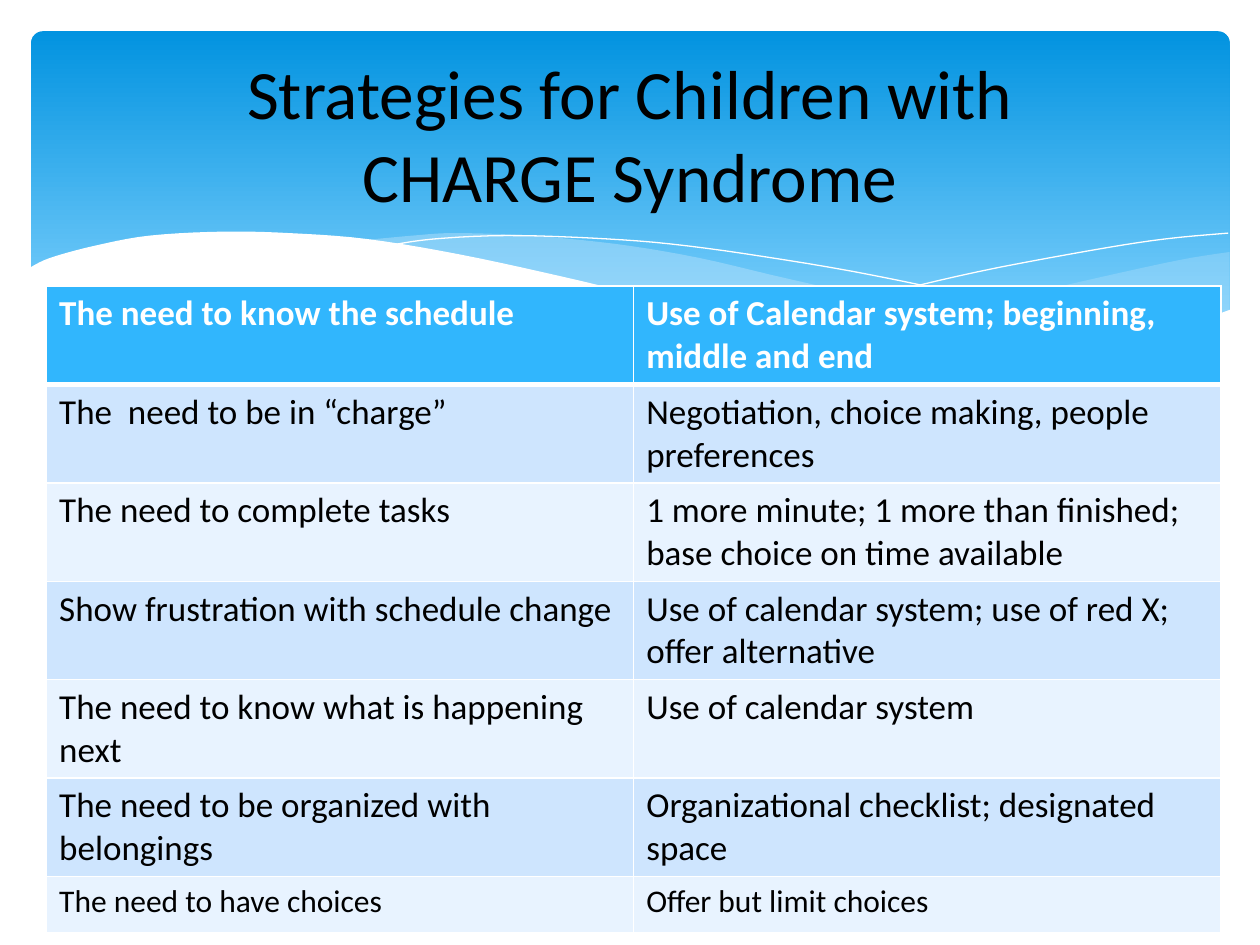
from lxml import etree
from pptx import Presentation
from pptx.dml.color import RGBColor
from pptx.enum.shapes import MSO_SHAPE
from pptx.enum.text import MSO_ANCHOR, PP_ALIGN
from pptx.oxml.ns import qn
from pptx.util import Cm, Pt

ROUNDED = MSO_SHAPE.ROUNDED_RECTANGLE
MIDDLE = MSO_ANCHOR.MIDDLE
CENTER = PP_ALIGN.CENTER

FONT = "Calibri"
WHITE = RGBColor(0xFF, 0xFF, 0xFF)
BLACK = RGBColor(0x00, 0x00, 0x00)
DEEP_BLUE = RGBColor(0x02, 0x93, 0xE0)
SKY_BLUE = RGBColor(0x83, 0xD3, 0xFE)
MIST = RGBColor(0xC6, 0xE7, 0xFC)
HEADER_BLUE = RGBColor(0x31, 0xB6, 0xFD)
BAND_DARK = RGBColor(0xCE, 0xE5, 0xFE)
BAND_LIGHT = RGBColor(0xE8, 0xF3, 0xFF)

RIGHT_WAVE = [
    [(24.21, 0.41), (23.16, 0.58), (21.29, 0.99), (19.2, 1.47), (16.21, 2.06)],
    [(16.21, 2.06), (17.32, 2.21), (18.64, 2.34), (20.09, 2.39), (21.34, 2.31),
     (22.61, 2.11), (23.52, 1.85), (24.21, 1.6)],
]
MIDDLE_WAVE = [
    [(22.1, 2.26), (20.68, 2.06), (18.24, 1.6), (15.39, 0.97), (13.51, 0.53),
     (11.84, 0.25), (10.08, 0.08), (8.59, 0.03), (7.75, 0.08), (6.68, 0.18)],
    [(6.68, 0.18), (8.1, 0.38), (9.68, 0.69), (10.82, 0.97), (12.88, 1.42),
     (15.11, 1.88), (17.07, 2.18), (18.75, 2.36), (20.19, 2.39), (21.18, 2.36),
     (22.1, 2.26)],
]
FALLING_LINE = [
    [(7.26, 0.28), (8.15, 0.15), (9.6, 0.08), (11.33, 0.13), (12.95, 0.25),
     (14.86, 0.51), (17.07, 0.89), (19.61, 1.45), (22.45, 2.24)],
]
RISING_LINE = [
    [(14.99, 1.85), (17.07, 1.3), (19.13, 0.81), (21.41, 0.38), (22.89, 0.15),
     (24.18, 0.03)],
]
WHITE_WAVE = [
    [(24.23, 1.57), (23.04, 1.98), (21.64, 2.26), (19.96, 2.36), (17.86, 2.24),
     (15.32, 1.88), (12.85, 1.4), (10.77, 0.91), (8.69, 0.46), (6.83, 0.15),
     (5.26, 0.03), (3.91, 0), (2.44, 0.08), (1.35, 0.28), (0.43, 0.53), (0, 0.74)],
    [(0, 3.68), (24.23, 3.68)],
]

STRATEGIES = [
    ("The need to know the schedule", "Use of Calendar system; beginning, middle and end"),
    ("The  need to be in “charge”", "Negotiation, choice making, people preferences"),
    ("The need to complete tasks",
     "1 more minute; 1 more than finished; base choice on time available"),
    ("Show frustration with schedule change",
     "Use of calendar system; use of red X;  offer alternative"),
    ("The need to know what is happening next", "Use of calendar system"),
    ("The need to be organized with belongings", "Organizational checklist; designated space"),
    ("The need to have choices", "Offer but limit choices"),
]


def smooth_curve(knots, steps=5):
    """Return points of a Catmull-Rom curve through the knots."""
    if len(knots) < 3:
        return knots
    padded = [knots[0], *knots, knots[-1]]
    points = [knots[0]]
    for a, b, c, d in zip(padded, padded[1:], padded[2:], padded[3:]):
        for step in range(1, steps + 1):
            t = step / steps
            points.append(tuple(
                0.5 * (2 * q + (r - p) * t + (2 * p - 5 * q + 4 * r - s) * t ** 2
                       + (3 * q - p - 3 * r + s) * t ** 3)
                for p, q, r, s in zip(a, b, c, d)))
    return points


def add_curve(slide, left, top, curves, closed):
    """Draw the curves as one outline, offset from left and top."""
    points = [(left + Cm(x), top + Cm(y)) for knots in curves for x, y in smooth_curve(knots)]
    builder = slide.shapes.build_freeform(*points[0])
    builder.add_line_segments(points[1:], close=closed)
    outline = builder.convert_to_shape()
    outline.shadow.inherit = False
    return outline


def add_wave(slide, left, top, curves, color, opacity=100):
    """Draw a filled wave."""
    wave = add_curve(slide, left, top, curves, True)
    wave.fill.solid()
    wave.fill.fore_color.rgb = color
    wave.line.fill.background()
    if opacity < 100:
        tint = wave.fill._xPr.find(".//" + qn("a:srgbClr"))
        etree.SubElement(tint, qn("a:alpha"), val=str(opacity * 1000))


def add_hairline(slide, left, top, curves):
    """Draw a thin white curve."""
    hairline = add_curve(slide, left, top, curves, False)
    hairline.fill.background()
    hairline.line.color.rgb = WHITE
    hairline.line.width = Pt(0)


def add_banner(slide, left, top, width, height):
    """Draw the rounded gradient banner."""
    banner = slide.shapes.add_shape(ROUNDED, left, top, width, height)
    banner.adjustments[0] = 0.034
    banner.shadow.inherit = False
    banner.line.fill.background()
    banner.fill.gradient()
    banner.fill.gradient_angle = 270
    stops = banner.fill.gradient_stops
    for stop, color, position in zip(stops, (DEEP_BLUE, SKY_BLUE), (0, 0.9)):
        stop.color.rgb = color
        stop.position = position


def add_waves(slide, left, top):
    """Layer the waves over the foot of the banner."""
    add_wave(slide, left, top, RIGHT_WAVE, MIST, 29)
    add_wave(slide, left, top, MIDDLE_WAVE, MIST, 40)
    add_hairline(slide, left, top, FALLING_LINE)
    add_hairline(slide, left, top, RISING_LINE)
    add_wave(slide, left, top, WHITE_WAVE, WHITE)


def set_borders(cell, top, bottom):
    """Give a cell white borders, with top and bottom widths in points."""
    properties = cell._tc.get_or_add_tcPr()
    for side, width in (("L", 1), ("R", 1), ("T", top), ("B", bottom)):
        border = etree.SubElement(properties, qn(f"a:ln{side}"), w=str(Pt(width)))
        fill = etree.SubElement(border, qn("a:solidFill"))
        etree.SubElement(fill, qn("a:srgbClr"), val=str(WHITE))


def add_strategies(slide, left, top, width, row_height, last_height):
    """Build the table of needs and strategies."""
    last = len(STRATEGIES) - 1
    table = slide.shapes.add_table(
        len(STRATEGIES), 2, left, top, width, row_height * last + last_height).table
    for index, texts in enumerate(STRATEGIES):
        header = index == 0
        band = HEADER_BLUE if header else BAND_DARK if index % 2 else BAND_LIGHT
        table.rows[index].height = last_height if index == last else row_height
        for cell, text in zip(table.rows[index].cells, texts):
            set_borders(cell, 3 if index == 1 else 1, 3 if header else 1)
            cell.fill.solid()
            cell.fill.fore_color.rgb = band
            cell.text = text
            font = cell.text_frame.paragraphs[0].font
            font.name = FONT
            font.size = Pt(18 if index == last else 20)
            font.bold = header
            font.color.rgb = WHITE if header else BLACK


def add_title(slide, left, top, width, height):
    """Place the centred two-line title."""
    frame = slide.shapes.add_textbox(left, top, width, height).text_frame
    frame.word_wrap = True
    frame.vertical_anchor = MIDDLE
    title = frame.paragraphs[0]
    title.text = "Strategies for Children with\vCHARGE Syndrome"
    title.alignment = CENTER
    title.font.name = FONT
    title.font.size = Pt(39.6)
    title.font.color.rgb = BLACK


def main():
    """Build and save the slide."""
    deck = Presentation()
    deck.slide_width, deck.slide_height = Cm(25.4), Cm(19.05)
    slide = deck.slides.add_slide(deck.slide_layouts[6])
    add_banner(slide, Cm(0.63), Cm(0.63), Cm(24.16), Cm(6.86))
    add_waves(slide, Cm(0.58), Cm(4.67))
    add_strategies(slide, Cm(0.94), Cm(5.77), Cm(23.67), Cm(1.98), Cm(1.14))
    add_title(slide, Cm(1.27), Cm(0.94), Cm(22.86), Cm(3.48))
    deck.save("out.pptx")


if __name__ == "__main__":
    main()
